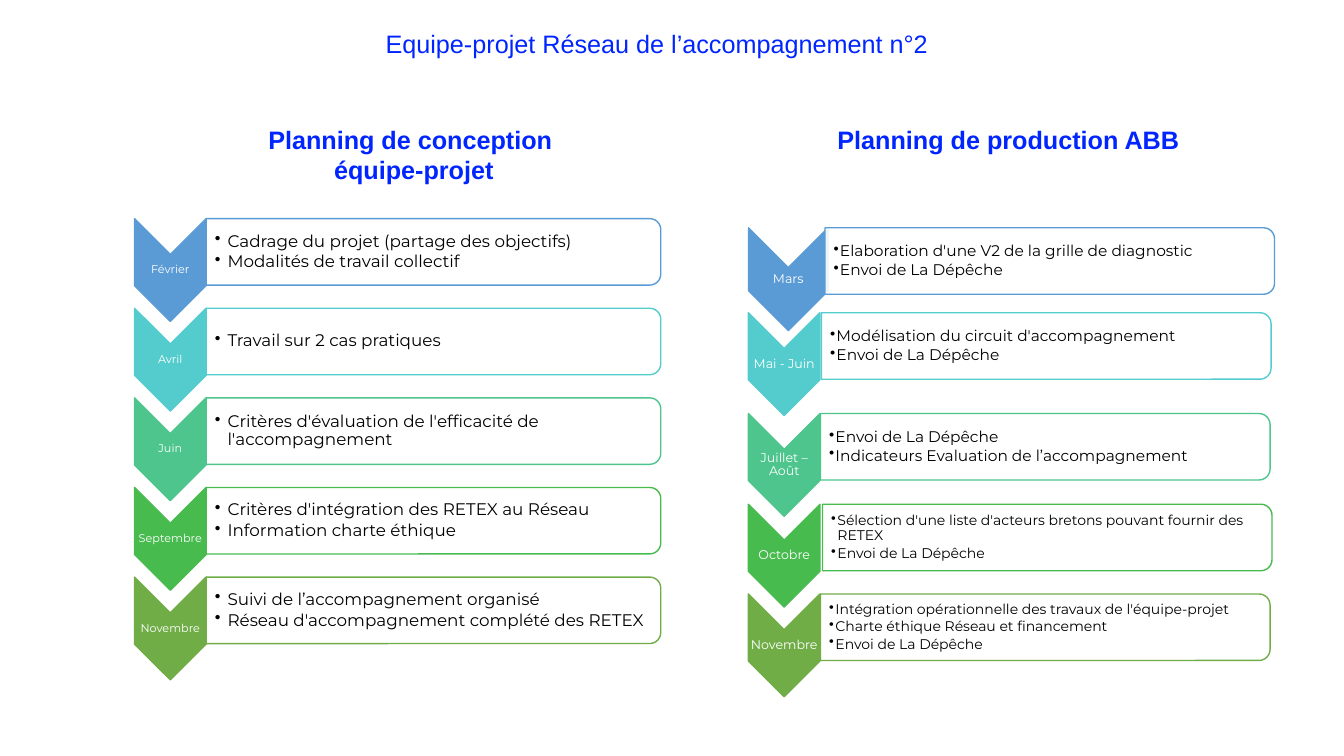
from lxml.etree import SubElement
from pptx import Presentation
from pptx.dml.color import RGBColor
from pptx.enum.shapes import MSO_SHAPE
from pptx.enum.text import MSO_ANCHOR, PP_ALIGN
from pptx.oxml.ns import qn
from pptx.util import Pt

HEADING_BLUE = RGBColor(0x00, 0x25, 0xFF)
WHITE = RGBColor(0xFF, 0xFF, 0xFF)
BLACK = RGBColor(0x00, 0x00, 0x00)
STEP_COLOURS = [
    RGBColor(0x5B, 0x9B, 0xD5),
    RGBColor(0x54, 0xCC, 0xCD),
    RGBColor(0x4D, 0xC5, 0x8D),
    RGBColor(0x48, 0xBB, 0x4F),
    RGBColor(0x70, 0xAD, 0x47),
]

# lines, (left, top, width, height), bold, alignment
HEADINGS = [
    (["Equipe-projet Réseau de l’accompagnement n°2 "],
     (117.4, 16.6, 708.5, 29), False, PP_ALIGN.CENTER),
    (["Planning de conception", " équipe-projet"],
     (124.6, 85, 337, 51), True, PP_ALIGN.CENTER),
    (["Planning de production ABB"],
     (591.1, 85, 288.7, 29), True, PP_ALIGN.LEFT),
]

DESIGN_STEPS = [
    ("Février", ["Cadrage du projet (partage des objectifs)",
                 "Modalités de travail collectif"]),
    ("Avril", ["Travail sur 2 cas pratiques"]),
    ("Juin", ["Critères d'évaluation de l'efficacité de l'accompagnement"]),
    ("Septembre", ["Critères d'intégration des RETEX au Réseau",
                   "Information charte éthique"]),
    ("Novembre", ["Suivi de l’accompagnement organisé",
                  "Réseau d'accompagnement complété des RETEX"]),
]
DESIGN_TOP, DESIGN_PITCH = 156.2, 64

# month, bullets, top, card left, chevron width, bullet size
PRODUCTION_STEPS = [
    ("Mars", ["Elaboration d'une V2 de la grille de diagnostic",
              "Envoi de La Dépêche"], 162.7, 589.3, 56.9, 11),
    ("Mai - Juin", ["Modélisation du circuit d'accompagnement",
                    "Envoi de La Dépêche"], 223.4, 586.8, 51.1, 11),
    ("Juillet – Août", ["Envoi de La Dépêche",
                        "Indicateurs Evaluation de l’accompagnement"],
     295.4, 586.1, 51.1, 11),
    ("Octobre", ["Sélection d'une liste d'acteurs bretons pouvant fournir des RETEX",
                 "Envoi de La Dépêche"], 360.2, 587.5, 51.1, 10),
    ("Novembre", ["Intégration opérationnelle des travaux de l'équipe-projet",
                  "Charte éthique Réseau et financement",
                  "Envoi de La Dépêche"], 424.3, 586.1, 51.1, 10),
]

CHEVRON_HEIGHT, CARD_HEIGHT, MONTH_HEIGHT = 73.4, 47.5, 22.3


def add_text(slide, lines, box, size, colour, font="Montserrat", bold=False,
             alignment=PP_ALIGN.LEFT, insets=None, spacing=None,
             space_after=0, bullet_indent=None):
    frame = slide.shapes.add_textbox(*map(Pt, box)).text_frame
    frame.word_wrap = True
    if insets:
        frame.vertical_anchor = MSO_ANCHOR.MIDDLE
        frame.margin_left, frame.margin_top, frame.margin_right, frame.margin_bottom = map(Pt, insets)
    for index, line in enumerate(lines):
        paragraph = frame.paragraphs[0] if index == 0 else frame.add_paragraph()
        paragraph.text = line
        paragraph.alignment = alignment
        if spacing:
            paragraph.line_spacing = spacing
            paragraph.space_after = Pt(space_after)
        if bullet_indent:
            properties = paragraph._p.get_or_add_pPr()
            properties.set("marL", str(Pt(bullet_indent)))
            properties.set("indent", str(-Pt(bullet_indent)))
            SubElement(properties, qn("a:buChar")).set("char", "•")
        paragraph.font.name = font
        paragraph.font.size = Pt(size)
        paragraph.font.bold = bold
        paragraph.font.color.rgb = colour


def add_turned_shape(slide, kind, box, fill, line):
    """Add a shape turned a quarter clockwise so that it covers box as seen."""
    left, top, width, height = box
    shift = (width - height) / 2
    shape = slide.shapes.add_shape(
        kind, Pt(left + shift), Pt(top - shift), Pt(height), Pt(width))
    shape.rotation = 90
    shape.shadow.inherit = False
    shape.fill.solid()
    shape.fill.fore_color.rgb = fill
    shape.line.color.rgb = line
    shape.line.width = Pt(1)
    return shape


def add_step(slide, month, bullets, colour, top, chevron_left, chevron_width,
             card_left, card_width, month_size, bullet_size, bullet_indent):
    add_turned_shape(slide, MSO_SHAPE.CHEVRON,
                     (chevron_left, top, chevron_width, CHEVRON_HEIGHT), colour, colour)
    month_top = top + (CHEVRON_HEIGHT - MONTH_HEIGHT) / 2
    add_text(slide, [month], (chevron_left, month_top, chevron_width, MONTH_HEIGHT),
             month_size, WHITE, alignment=PP_ALIGN.CENTER,
             insets=(0.7, 0.7, 0.7, 0.7), spacing=0.9)
    card = add_turned_shape(slide, MSO_SHAPE.ROUND_2_SAME_RECTANGLE,
                            (card_left, top, card_width, CARD_HEIGHT), WHITE, colour)
    fill_colour = card._element.spPr.find(qn("a:solidFill"))[0]
    SubElement(fill_colour, qn("a:alpha")).set("val", "90000")
    add_text(slide, bullets, (card_left, top + 2.2, card_width - 2.5, CARD_HEIGHT - 4.4),
             bullet_size, BLACK, insets=(6.2, 0.7, 0.7, 0.7), spacing=0.9,
             space_after=bullet_size * 0.15, bullet_indent=bullet_indent)


def main():
    presentation = Presentation()
    presentation.slide_width, presentation.slide_height = Pt(960), Pt(540)
    slide = presentation.slides.add_slide(presentation.slide_layouts[6])
    for index, ((month, bullets), colour) in enumerate(zip(DESIGN_STEPS, STEP_COLOURS)):
        add_step(slide, month, bullets, colour, DESIGN_TOP + index * DESIGN_PITCH,
                 chevron_left=96.1, chevron_width=51.1, card_left=147.3, card_width=324.7,
                 month_size=8, bullet_size=12, bullet_indent=9)
    for step, colour in zip(PRODUCTION_STEPS, STEP_COLOURS):
        month, bullets, top, card_left, chevron_width, bullet_size = step
        add_step(slide, month, bullets, colour, top,
                 chevron_left=534.6, chevron_width=chevron_width,
                 card_left=card_left, card_width=321.1,
                 month_size=9, bullet_size=bullet_size, bullet_indent=4.5)
    for lines, box, bold, alignment in HEADINGS:
        add_text(slide, lines, box, 18, HEADING_BLUE, font="Arial", bold=bold,
                 alignment=alignment)
    presentation.save("out.pptx")


if __name__ == "__main__":
    main()
